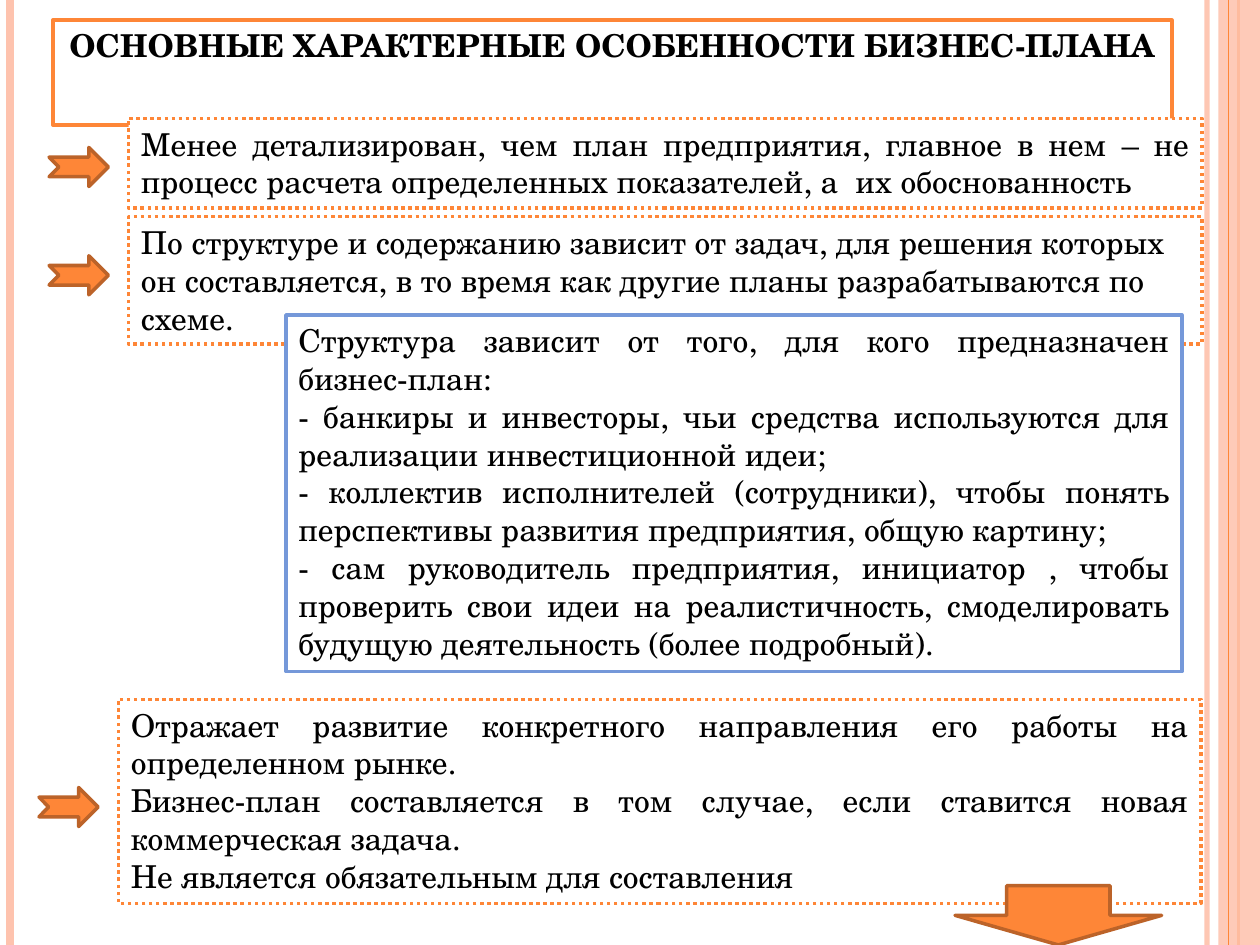
from lxml import etree
from pptx import Presentation
from pptx.dml.color import RGBColor
from pptx.enum import dml, shapes, text
from pptx.oxml import ns
from pptx.util import Inches, Pt

ORANGE = RGBColor(0xFE, 0x86, 0x37)
BROWN = RGBColor(0xBC, 0x63, 0x29)
PEACH = RGBColor(0xFE, 0xC3, 0xAE)
BLUE = RGBColor(0x75, 0x98, 0xD9)
WHITE = RGBColor(0xFF, 0xFF, 0xFF)
BLACK = RGBColor(0, 0, 0)
FONT = "TeX Gyre Schola"

JUSTIFY = text.PP_ALIGN.JUSTIFY
LEFT = text.PP_ALIGN.LEFT
CENTER = text.PP_ALIGN.CENTER

TITLE = "ОСНОВНЫЕ ХАРАКТЕРНЫЕ ОСОБЕННОСТИ БИЗНЕС-ПЛАНА"
DETAIL = ["Менее детализирован, чем план предприятия, главное в нем – не процесс "
          "расчета определенных показателей, а  их обоснованность"]
STRUCTURE = ["По структуре и содержанию зависит от задач, для решения которых он "
             "составляется, в то время как другие планы разрабатываются по схеме."]
READERS = [
    "Структура зависит от того, для кого предназначен бизнес-план:",
    "- банкиры и инвесторы, чьи средства используются для реализации "
    "инвестиционной идеи;",
    "- коллектив исполнителей (сотрудники), чтобы понять перспективы развития "
    "предприятия, общую картину;",
    "- сам руководитель предприятия, инициатор , чтобы проверить свои идеи на "
    "реалистичность, смоделировать будущую деятельность (более подробный).",
]
PURPOSE = [
    "Отражает развитие конкретного направления его работы на определенном рынке.",
    "Бизнес-план составляется в том случае, если ставится новая коммерческая задача.",
    "Не является обязательным для составления",
]


def write_text(frame, paragraphs, align=LEFT, size=18, bold=False, wrap=True):
    frame.word_wrap = wrap
    frame.auto_size = text.MSO_AUTO_SIZE.SHAPE_TO_FIT_TEXT
    frame.vertical_anchor = text.MSO_ANCHOR.TOP
    for index, wording in enumerate(paragraphs):
        paragraph = frame.paragraphs[0] if index == 0 else frame.add_paragraph()
        paragraph.alignment = align
        run = paragraph.add_run()
        run.text = wording
        run.font.name = FONT
        run.font.size = Pt(size)
        run.font.bold = bold
        run.font.color.rgb = BLACK


def paint(shape, fill, outline=None, dash=None):
    shape.fill.solid()
    shape.fill.fore_color.rgb = fill
    if outline is None:
        shape.line.fill.background()
        return
    shape.line.color.rgb = outline
    shape.line.width = Pt(2)
    if dash:
        shape.line.dash_style = dash


def set_opacity(shape, percent):
    color = shape.element.spPr.find(".//" + ns.qn("a:srgbClr"))
    etree.SubElement(color, ns.qn("a:alpha"), val=str(percent * 1000))


def add_preset(slide, kind, box, fill, outline=None, dash=None):
    shape = slide.shapes.add_shape(kind, *map(Inches, box))
    shape.shadow.inherit = False
    paint(shape, fill, outline, dash)
    return shape


def add_stripe(slide, x, top, bottom, color, width, opacity=100):
    stripe = slide.shapes.add_connector(
        shapes.MSO_CONNECTOR.STRAIGHT,
        Inches(x), Inches(top), Inches(x), Inches(bottom))
    stripe.line.color.rgb = color
    stripe.line.width = Pt(width)
    if opacity < 100:
        set_opacity(stripe, opacity)
    etree.SubElement(stripe.element.spPr, ns.qn("a:effectLst"))


def add_side_bands(slide, box):
    left, top, width, height = box
    right, bottom = left + width, top + height
    add_stripe(slide, right - 0.42, top, bottom, PEACH, 3, opacity=93)
    add_stripe(slide, left + 0.08, top, bottom, PEACH, 4.5)
    add_stripe(slide, right - 0.17, top, bottom, ORANGE, 1.5)
    band = add_preset(slide, shapes.MSO_SHAPE.RECTANGLE,
                      (right - 0.33, top, 0.33, height), PEACH)
    set_opacity(band, 87)
    add_stripe(slide, right - 0.25, top, bottom, ORANGE, 0.75)


def add_heading(slide, box):
    heading = slide.shapes.title
    heading.left, heading.top, heading.width, heading.height = map(Inches, box)
    paint(heading, WHITE, ORANGE)
    write_text(heading.text_frame, [TITLE], align=CENTER, bold=True, wrap=False)


def add_panel(slide, box, paragraphs, align=JUSTIFY, outline=ORANGE, dash=None):
    panel = add_preset(slide, shapes.MSO_SHAPE.RECTANGLE, box, WHITE, outline, dash)
    write_text(panel.text_frame, paragraphs, align=align)


def add_feature(slide, box, paragraphs, arrow_drop, align=JUSTIFY):
    left, top = box[:2]
    add_panel(slide, box, paragraphs, align, dash=dml.MSO_LINE.ROUND_DOT)
    add_preset(slide, shapes.MSO_SHAPE.NOTCHED_RIGHT_ARROW,
               (left - 0.63, top + arrow_drop, 0.47, 0.31), ORANGE, BROWN)


def main():
    deck = Presentation()
    deck.slide_width, deck.slide_height = Inches(10), Inches(7.5)
    slide = deck.slides.add_slide(deck.slide_layouts[5])

    add_side_bands(slide, (0, 0, 10, 7.5))
    add_heading(slide, (0.42, 0.16, 8.88, 0.4))
    add_feature(slide, (1.02, 0.94, 8.52, 0.71), DETAIL, arrow_drop=0.23)
    add_feature(slide, (1.02, 1.72, 8.52, 1.01), STRUCTURE, arrow_drop=0.31, align=LEFT)
    add_panel(slide, (2.27, 2.5, 7.11, 2.83), READERS, outline=BLUE)
    add_feature(slide, (0.94, 5.55, 8.59, 1.62), PURPOSE, arrow_drop=0.7)
    add_preset(slide, shapes.MSO_SHAPE.DOWN_ARROW,
               (7.58, 7.03, 1.64, 0.47), ORANGE, BROWN)

    deck.save("out.pptx")


if __name__ == "__main__":
    main()
